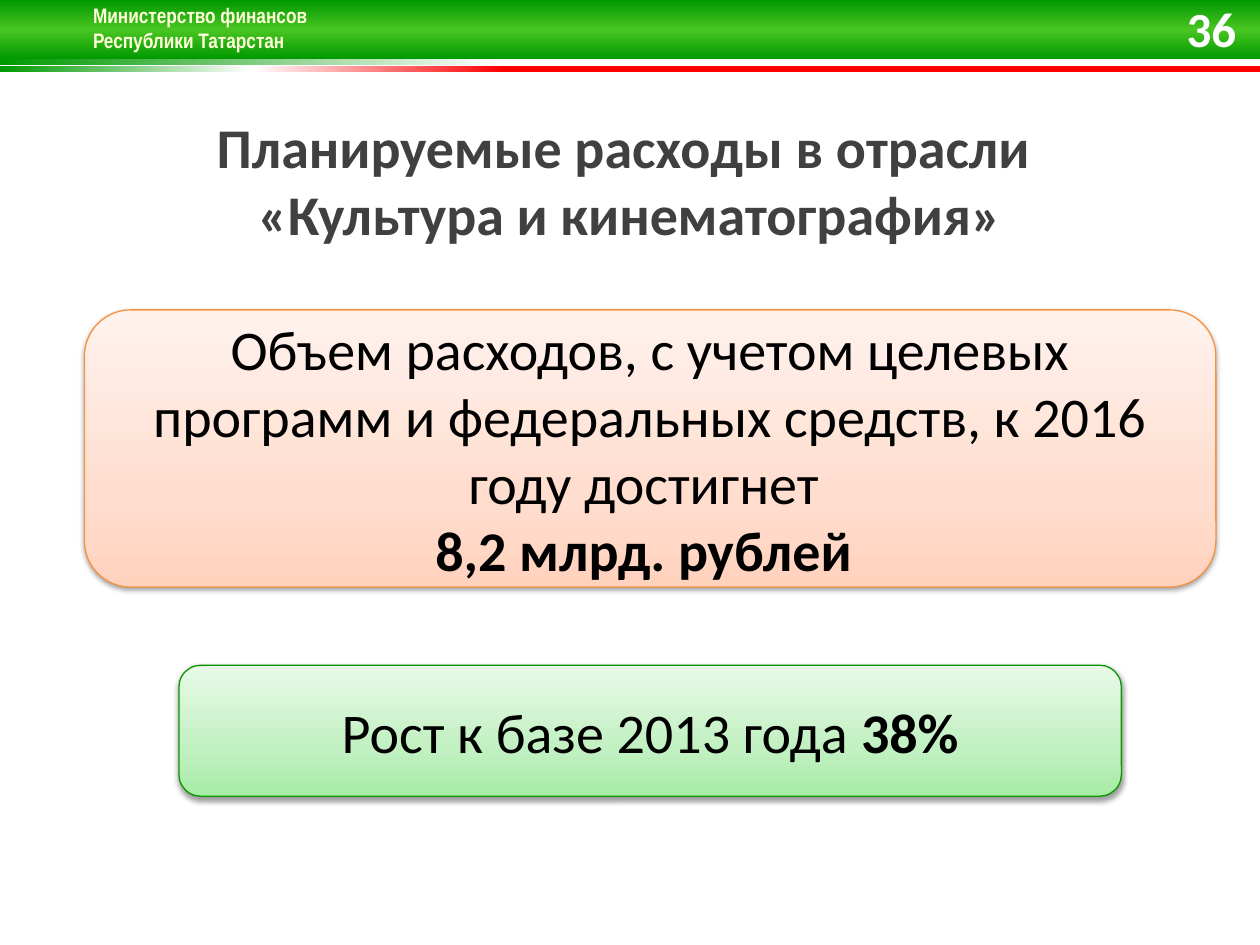
from lxml import etree
from pptx import Presentation
from pptx.dml.color import RGBColor
from pptx.enum.shapes import MSO_SHAPE
from pptx.enum.text import MSO_ANCHOR, PP_ALIGN
from pptx.oxml.ns import qn
from pptx.util import Inches, Pt

RECT, ROUNDED = MSO_SHAPE.RECTANGLE, MSO_SHAPE.ROUNDED_RECTANGLE
TOP, MIDDLE = MSO_ANCHOR.TOP, MSO_ANCHOR.MIDDLE
LEFT, CENTER, RIGHT = PP_ALIGN.LEFT, PP_ALIGN.CENTER, PP_ALIGN.RIGHT

COLORS = {
    "white": "FFFFFF", "black": "000000", "cream": "FFFFD9", "gray": "404040",
    "green": "009900", "lime": "49C522", "red": "FF0000",
    "orange edge": "F69240", "peach": "FFD2BD", "peach mid": "FFDED0", "peach pale": "FFF2ED",
    "green edge": "0B9700", "mint": "A5ECA5", "mint mid": "C1F0C1", "mint pale": "E7FAE7",
}

BANDS = [
    ((0, 0.47, 10, 0.05), [(0, "white"), (60, "white"), (100, "green")], 180),
    ((0, 0.52, 10, 0.05), [(60, "red"), (80, "white"), (100, "green")], 180),
    ((0, 0, 10, 0.47), [(0, "green"), (50, "lime"), (100, "green")], 90),
]

LABELS = [
    ((0.64, -0.03, 1.92, 0.71), [("Министерство финансов\nРеспублики Татарстан", True)],
     "Arial Narrow", 12, "cream", LEFT, TOP, True),
    ((0, 0.84, 10, 0.86), [("Планируемые расходы в отрасли \n«Культура и кинематография»", True)],
     "Calibri", 32, "gray", CENTER, TOP, False),
    ((9.27, 0.05, 0.64, 0.34), [("36", True)],
     "Calibri", 28, "white", RIGHT, MIDDLE, False),
]

CARDS = [
    ((0.67, 2.46, 8.98, 2.2), ("peach", "peach mid", "peach pale"), "orange edge",
     [("Объем расходов, с учетом целевых программ и федеральных средств, "
       "к 2016 году достигнет \n", False), ("8,2 млрд. рублей ", True)]),
    ((1.42, 5.28, 7.48, 1.04), ("mint", "mint mid", "mint pale"), "green edge",
     [("Рост к базе 2013 года ", False), ("38%", True)]),
]


def rgb(color):
    return RGBColor.from_string(COLORS[color])


def add_shadow(effects, blur, distance, angle, opacity):
    shadow = etree.SubElement(effects, qn("a:outerShdw"), blurRad=str(Pt(blur)),
                              dist=str(Pt(distance)), dir=str(angle * 60000), rotWithShape="0")
    color = etree.SubElement(shadow, qn("a:srgbClr"), val=COLORS["black"])
    etree.SubElement(color, qn("a:alpha"), val=str(opacity * 1000))


def add_gradient_shape(slide, preset, box, stops, angle):
    shape = slide.shapes.add_shape(preset, *map(Inches, box))
    shape.shadow.inherit = False
    shape.line.fill.background()
    shape.fill.gradient()
    gradient = shape._element.spPr.find(qn("a:gradFill"))
    for child in list(gradient):
        gradient.remove(child)
    stop_list = etree.SubElement(gradient, qn("a:gsLst"))
    for position, color in stops:
        stop = etree.SubElement(stop_list, qn("a:gs"), pos=str(position * 1000))
        etree.SubElement(stop, qn("a:srgbClr"), val=COLORS[color])
    etree.SubElement(gradient, qn("a:lin"), ang=str(angle * 60000), scaled="0")
    return shape


def write_text(frame, runs, font, size, color, align, anchor, shadowed=False):
    frame.word_wrap = True
    frame.vertical_anchor = anchor
    paragraph = frame.paragraphs[0]
    paragraph.alignment = align
    for text, bold in runs:
        for index, line in enumerate(text.split("\n")):
            if index:
                paragraph.add_line_break()
            if not line:
                continue
            run = paragraph.add_run()
            run.text = line
            run.font.size, run.font.bold, run.font.name = Pt(size), bold, font
            run.font.color.rgb = rgb(color)
            if shadowed:
                effects = etree.Element(qn("a:effectLst"))
                add_shadow(effects, 3, 3, 45, 45)
                run.font._element.find(qn("a:latin")).addprevious(effects)


def main():
    prs = Presentation()
    prs.slide_width, prs.slide_height = Inches(10), Inches(7.5)
    slide = prs.slides.add_slide(prs.slide_layouts[6])

    for box, stops, angle in BANDS:
        add_gradient_shape(slide, RECT, box, stops, angle)

    for box, runs, *style in LABELS:
        label = slide.shapes.add_textbox(*map(Inches, box))
        write_text(label.text_frame, runs, *style)

    for box, shades, edge, runs in CARDS:
        card = add_gradient_shape(slide, ROUNDED, box, list(zip((0, 35, 100), shades)), 270)
        card.line.color.rgb = rgb(edge)
        card.line.width = Pt(0.75)
        add_shadow(card._element.spPr.find(qn("a:effectLst")), 3.1, 1.6, 90, 38)
        write_text(card.text_frame, runs, "Calibri", 32, "black", CENTER, MIDDLE)

    prs.save("out.pptx")


if __name__ == "__main__":
    main()
